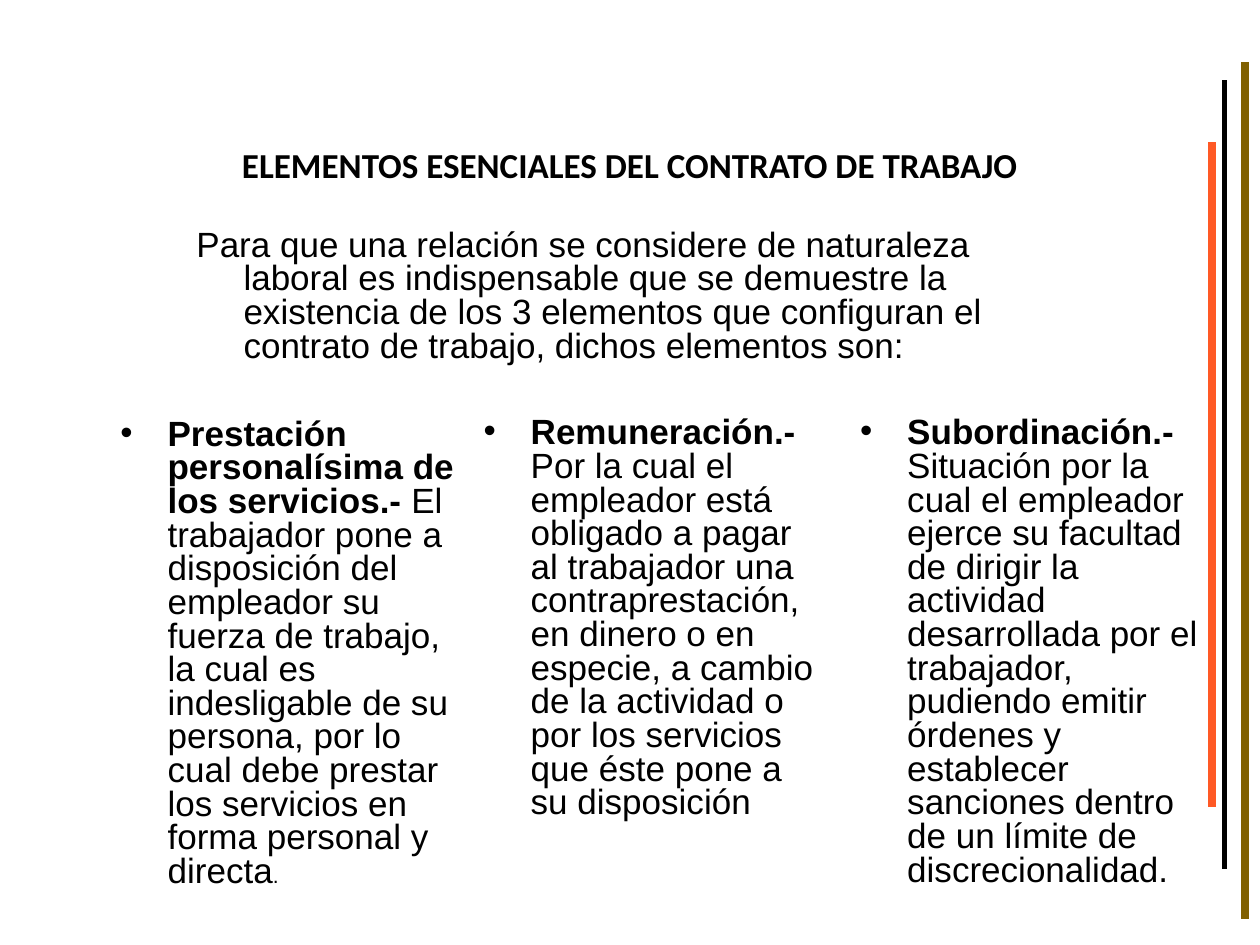
from dataclasses import dataclass

from lxml import etree
from pptx import Presentation
from pptx.dml.color import RGBColor
from pptx.enum import shapes, text
from pptx.oxml import ns
from pptx.util import Cm, Pt


@dataclass(frozen=True)
class Theme:
    head: str = "Calibri"
    body: str = "Arial"
    size: int = 20
    small: int = 12
    gap: int = 4
    ink: str = "000000"
    brown: str = "806000"
    orange: str = "FF5925"


@dataclass(frozen=True)
class Span:
    words: str
    bold: bool = False
    size: int = Theme.size


@dataclass(frozen=True)
class Block:
    left: float
    top: float
    width: float
    height: float
    spans: tuple[Span, ...]


@dataclass(frozen=True)
class Rule:
    x: float
    top: float
    end: float
    color: str
    width: float


THEME = Theme()
INDENT = 0.95
COL_W, COL_H = 7.39, 10.21

TITLE = Block(1.27, 2.77, 22.86, 2.16,
              (Span("ELEMENTOS ESENCIALES DEL CONTRATO DE TRABAJO", True),))
INTRO = Block(3.71, 4.52, 17.4, 3.4, (Span(
    "Para que una relación se considere de naturaleza laboral es indispensable "
    "que se demuestre la existencia de los 3 elementos que configuran el "
    "contrato de trabajo, dichos elementos son:"),))
COLUMNS = (
    Block(2.18, 8.33, COL_W, COL_H, (
        Span("Prestación personalísima de los servicios.- ", True),
        Span("El trabajador pone a disposición del empleador su fuerza de "
             "trabajo, la cual es indesligable de su persona, por lo cual debe "
             "prestar los servicios en forma personal y directa"),
        Span(".", size=THEME.small))),
    Block(9.5, 8.3, COL_W, COL_H, (
        Span("Remuneración.- ", True),
        Span("Por la cual el empleador está obligado a pagar al trabajador una "
             "contraprestación, en dinero o en especie, a cambio de la "
             "actividad o por los servicios que éste pone a su disposición"))),
    Block(17.09, 8.3, COL_W, COL_H, (
        Span("Subordinación.- ", True),
        Span("Situación por la cual el empleador ejerce su facultad de dirigir "
             "la actividad desarrollada por el trabajador, pudiendo emitir "
             "órdenes y establecer sanciones dentro de un límite de "
             "discrecionalidad."))),
)
RULES = (
    Rule(25.1, 1.25, 18.52, THEME.brown, 4.5),
    Rule(24.69, 1.62, 17.52, THEME.ink, 3),
    Rule(24.43, 2.87, 16.26, THEME.orange, 4.5),
)


def write(slide, block: Block, font: str):
    """Add a wrapped text box and return its paragraph."""
    box = slide.shapes.add_textbox(Cm(block.left), Cm(block.top),
                                   Cm(block.width), Cm(block.height))
    box.text_frame.word_wrap = True
    para = box.text_frame.paragraphs[0]
    for span in block.spans:
        run = para.add_run()
        run.text = span.words
        run.font.name = font
        run.font.size = Pt(span.size)
        run.font.bold = span.bold
        run.font.color.rgb = RGBColor.from_string(THEME.ink)
    return para


def hang(para, mark: str = "") -> None:
    """Give a paragraph a hanging indent, tight lines and an optional bullet."""
    para.line_spacing = 0.8
    para.space_before = Pt(THEME.gap)
    props = para._p.get_or_add_pPr()
    props.set("marL", str(Cm(INDENT)))
    props.set("indent", str(-Cm(INDENT)))
    if mark:
        font = etree.SubElement(props, ns.qn("a:buFont"))
        font.set("typeface", THEME.body)
        etree.SubElement(props, ns.qn("a:buChar")).set("char", mark)


def draw(slide, rule: Rule) -> None:
    line = slide.shapes.add_connector(
        shapes.MSO_CONNECTOR.STRAIGHT,
        Cm(rule.x), Cm(rule.top), Cm(rule.x), Cm(rule.end))
    line.line.color.rgb = RGBColor.from_string(rule.color)
    line.line.width = Pt(rule.width)
    etree.SubElement(line._element.spPr, ns.qn("a:effectLst"))


def main() -> None:
    deck = Presentation()
    deck.slide_width, deck.slide_height = Cm(25.4), Cm(19.05)
    slide = deck.slides.add_slide(deck.slide_layouts[6])
    write(slide, TITLE, THEME.head).alignment = text.PP_ALIGN.CENTER
    hang(write(slide, INTRO, THEME.body))
    for column in COLUMNS:
        hang(write(slide, column, THEME.body), "•")
    for rule in RULES:
        draw(slide, rule)
    deck.save("out.pptx")


if __name__ == "__main__":
    main()
